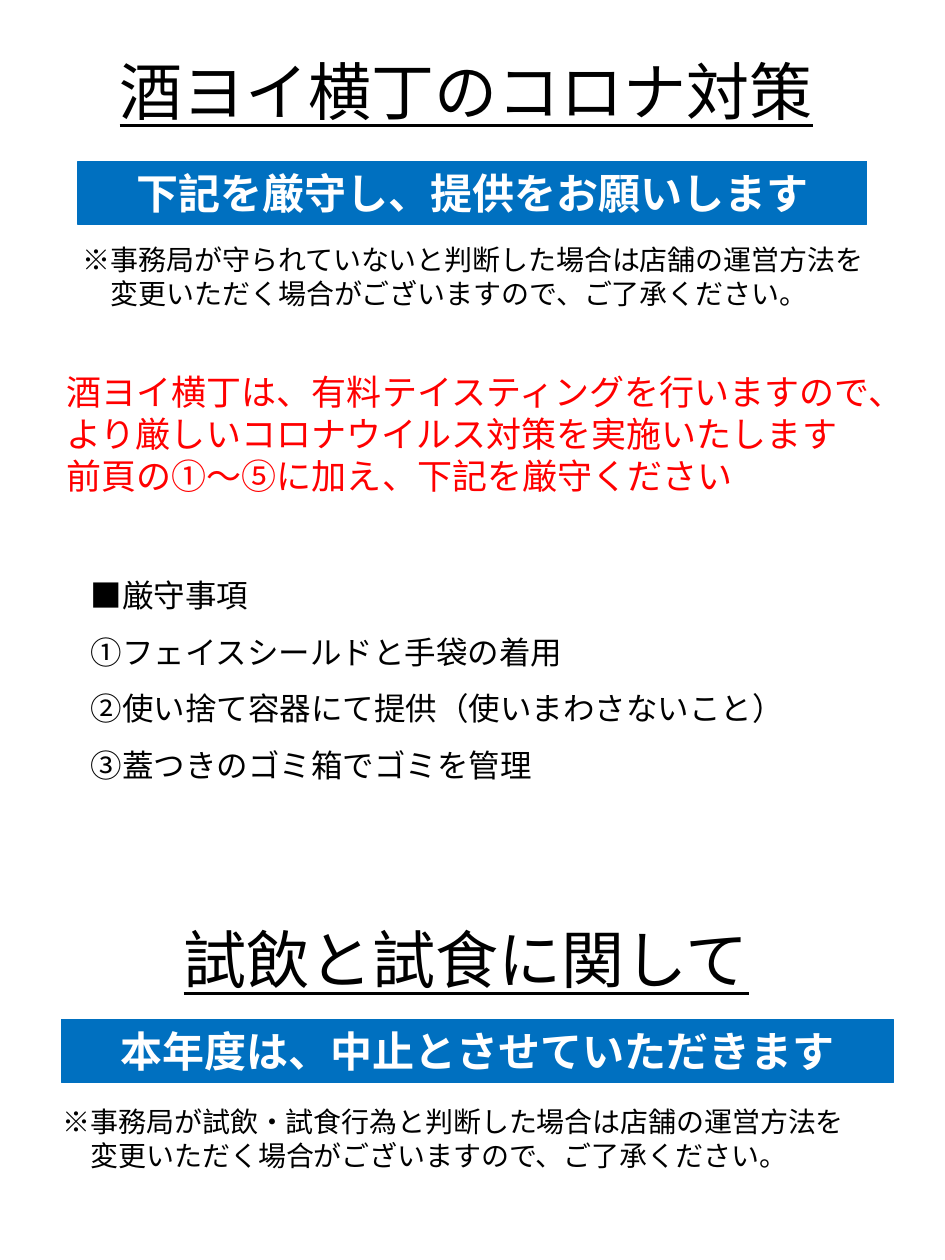
from dataclasses import dataclass

from pptx import Presentation
from pptx.dml.color import RGBColor
from pptx.enum.shapes import MSO_SHAPE
from pptx.enum.text import MSO_ANCHOR, MSO_AUTO_SIZE, PP_ALIGN
from pptx.oxml.ns import qn
from pptx.oxml.xmlchemy import OxmlElement
from pptx.util import Inches, Pt


@dataclass(frozen=True)
class Theme:
    font: str = "Noto Sans CJK JP"
    black: RGBColor = RGBColor(0, 0, 0)
    white: RGBColor = RGBColor(255, 255, 255)
    red: RGBColor = RGBColor(255, 0, 0)
    blue: RGBColor = RGBColor(0, 0x70, 0xC0)
    heading: int = 36
    banner: int = 24
    notice: int = 20
    rules: int = 18
    remark: int = 16


THEME = Theme()


def place(shape, box):
    shape.left, shape.top, shape.width, shape.height = map(Inches, box)


def write(shape, lines, size, color, align=PP_ALIGN.LEFT, spacing=1.0,
          bold=False, underline=False, indents=None, wrap=False):
    """Fill a shape with one unbulleted paragraph per line."""
    frame = shape.text_frame
    frame.word_wrap = wrap
    frame.auto_size = MSO_AUTO_SIZE.NONE
    frame.text = "\n".join(lines)
    for para, indent in zip(frame.paragraphs, indents or [0] * len(lines)):
        para.alignment, para.line_spacing = align, spacing
        para.space_before = Pt(0)
        properties = para._p.get_or_add_pPr()
        properties.set("marL", str(Pt(indent)))
        properties.set("indent", "0")
        properties.append(OxmlElement("a:buNone"))
        font = para.font
        font.name, font.size = THEME.font, Pt(size)
        font.bold, font.underline = bold, underline
        font.color.rgb = color
        east_asian = OxmlElement("a:ea")
        east_asian.set("typeface", THEME.font)
        properties.find(qn("a:defRPr")).append(east_asian)


def add_text(page, box, lines, size, color, **options):
    shape = page.shapes.add_textbox(*map(Inches, box))
    write(shape, lines, size, color, **options)


def add_heading(shape, box, text):
    place(shape, box)
    shape.text_frame.vertical_anchor = MSO_ANCHOR.TOP
    write(shape, [text], THEME.heading, THEME.black, underline=True)


def add_banner(page, box, text):
    banner = page.shapes.add_shape(MSO_SHAPE.RECTANGLE, *map(Inches, box))
    banner.shadow.inherit = False
    banner.fill.solid()
    banner.fill.fore_color.rgb = THEME.blue
    banner.line.color.rgb = THEME.blue
    banner.line.width = Pt(0.75)
    write(banner, [text], THEME.banner, THEME.white, PP_ALIGN.CENTER, bold=True)


def add_remark(page, box, first_line):
    # The second line starts one character in, after the ※ mark
    lines = [first_line, "変更いただく場合がございますので、ご了承ください。"]
    add_text(page, box, lines, THEME.remark, THEME.black,
             indents=[0, THEME.remark])


def add_rules(shape, box, lines):
    place(shape, box)
    write(shape, lines, THEME.rules, THEME.black, spacing=1.5)


def build_page(deck):
    page = deck.slides.add_slide(deck.slide_layouts[1])
    title, body = page.placeholders

    # Infection control measures
    add_heading(title, (0.85, 0.37, 5.76, 0.71), "酒ヨイ横丁のコロナ対策")
    add_banner(page, (0.62, 1.28, 6.26, 0.5), "下記を厳守し、提供をお願いします")
    add_remark(page, (0.56, 1.88, 6.48, 0.64),
               "※事務局が守られていないと判断した場合は店舗の運営方法を")
    add_text(page, (0.43, 2.89, 6.63, 1.11),
             ["酒ヨイ横丁は、有料テイスティングを行いますので、",
              "より厳しいコロナウイルス対策を実施いたします",
              "前頁の①～⑤に加え、下記を厳守ください"],
             THEME.notice, THEME.red, wrap=True)
    add_rules(body, (0.62, 4.37, 5.76, 1.88),
              ["■厳守事項",
               "①フェイスシールドと手袋の着用",
               "②使い捨て容器にて提供（使いまわさないこと）",
               "③蓋つきのゴミ箱でゴミを管理"])

    # Tasting policy
    tasting_box = (1.36, 7.26, 4.75, 0.71)
    tasting = page.shapes.add_textbox(*map(Inches, tasting_box))
    add_heading(tasting, tasting_box, "試飲と試食に関して")
    add_banner(page, (0.49, 8.09, 6.6, 0.5), "本年度は、中止とさせていただきます")
    add_remark(page, (0.4, 8.72, 6.48, 0.64),
               "※事務局が試飲・試食行為と判断した場合は店舗の運営方法を")


def main():
    deck = Presentation()
    deck.slide_width, deck.slide_height = Inches(7.5), Inches(10)
    build_page(deck)
    deck.save("out.pptx")


if __name__ == "__main__":
    main()
